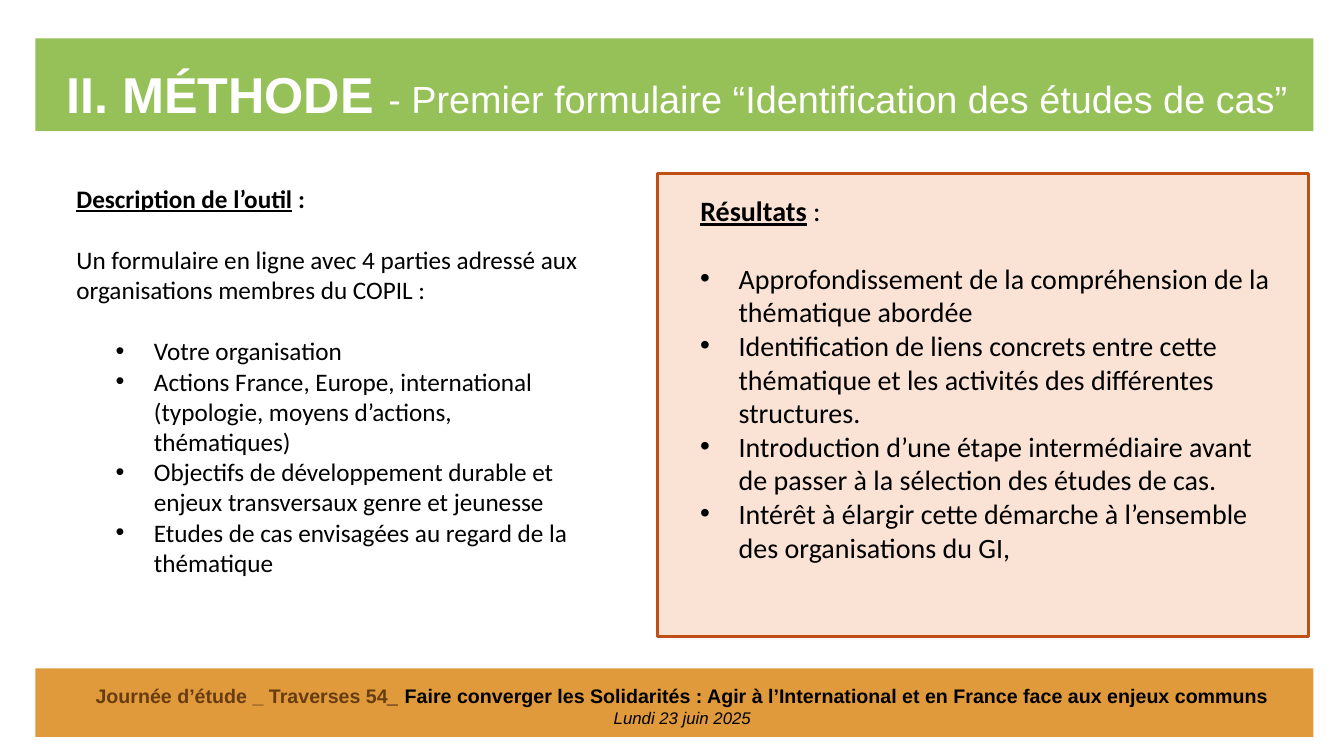
from dataclasses import dataclass

from lxml import etree
from pptx import Presentation
from pptx import util as u
from pptx.dml.color import RGBColor
from pptx.enum import shapes, text
from pptx.oxml import ns


@dataclass(frozen=True)
class Theme:
    green: str = "96C058"
    orange: str = "E09A3C"
    peach: str = "FAE2D5"
    rust: str = "BF4F14"
    brown: str = "683C11"
    white: str = "FFFFFF"
    black: str = "000000"
    heading_font: str = "Arial"
    body_font: str = "Calibri"
    title_size: int = 36
    subtitle_size: int = 27
    description_size: int = 18
    results_size: int = 20
    event_size: int = 14
    date_size: int = 12


THEME = Theme()
LINE_HEIGHT = 1.22
HEADING_INDENT = 7.2
LIST_INDENT = 35.2
BULLET_HANG = 27.4


def add_rectangle(slide, left, top, width, height, fill, line=None):
    shape = slide.shapes.add_shape(
        shapes.MSO_SHAPE.RECTANGLE, u.Pt(left), u.Pt(top), u.Pt(width), u.Pt(height)
    )
    shape.shadow.inherit = False
    shape.fill.solid()
    shape.fill.fore_color.rgb = RGBColor.from_string(fill)
    if line:
        shape.line.color.rgb = RGBColor.from_string(line)
        shape.line.width = u.Pt(2)
    else:
        shape.line.fill.background()


def add_text_box(slide, left, top, width, height, vertical_inset=3.6):
    shape = slide.shapes.add_textbox(u.Pt(left), u.Pt(top), u.Pt(width), u.Pt(height))
    frame = shape.text_frame
    frame.word_wrap = True
    frame.margin_left = frame.margin_right = u.Pt(7.2)
    frame.margin_top = frame.margin_bottom = u.Pt(vertical_inset)
    return frame


def add_run(paragraph, words, font, size, color=THEME.black, bold=False, italic=False, underline=False):
    run = paragraph.add_run()
    run.text = words
    run.font.name = font
    run.font.size = u.Pt(size)
    run.font.color.rgb = RGBColor.from_string(color)
    run.font.bold = bold
    run.font.italic = italic
    run.font.underline = underline


def set_indent(paragraph, left, hanging=0):
    properties = paragraph._p.get_or_add_pPr()
    properties.set("marL", str(u.Pt(left)))
    properties.set("indent", str(u.Pt(-hanging)))
    return properties


def add_heading(frame, words, size, indent, colon_bold):
    paragraph = frame.paragraphs[0]
    set_indent(paragraph, indent)
    add_run(paragraph, words, THEME.body_font, size, bold=True, underline=True)
    add_run(paragraph, " :", THEME.body_font, size, bold=colon_bold)


def add_bullets(frame, items, size):
    for index, item in enumerate(items):
        paragraph = frame.add_paragraph()
        if index == 0:
            paragraph.space_before = u.Pt(size * LINE_HEIGHT)
        properties = set_indent(paragraph, LIST_INDENT + BULLET_HANG, BULLET_HANG)
        etree.SubElement(properties, ns.qn("a:buFont"), typeface="Arial")
        etree.SubElement(properties, ns.qn("a:buChar"), char="•")
        add_run(paragraph, item, THEME.body_font, size)


def add_title(slide):
    add_rectangle(slide, 25.2, 27.4, 913, 66.2, THEME.green)
    paragraph = add_text_box(slide, 40.3, 20.2, 888.5, 51.1).paragraphs[0]
    paragraph.line_spacing = 1.5
    add_run(paragraph, "II. MÉTHODE ", THEME.heading_font, THEME.title_size, THEME.white, bold=True)
    add_run(
        paragraph, "- Premier formulaire “Identification des études de cas”",
        THEME.heading_font, THEME.subtitle_size, THEME.white,
    )


def add_description(slide):
    size = THEME.description_size
    frame = add_text_box(slide, 40.3, 123.8, 384.5, 316, 7.2)
    add_heading(frame, "Description de l’outil", size, HEADING_INDENT, True)
    introduction = frame.add_paragraph()
    introduction.space_before = u.Pt(size * LINE_HEIGHT)
    set_indent(introduction, HEADING_INDENT)
    add_run(
        introduction,
        "Un formulaire en ligne avec 4 parties adressé aux organisations membres du COPIL :",
        THEME.body_font, size,
    )
    add_bullets(frame, [
        "Votre organisation",
        "Actions France, Europe, international (typologie, moyens d’actions, thématiques)",
        "Objectifs de développement durable et enjeux transversaux genre et jeunesse",
        "Etudes de cas envisagées au regard de la thématique",
    ], size)


def add_results(slide):
    size = THEME.results_size
    add_rectangle(slide, 469.4, 123.8, 465.1, 331.2, THEME.peach, THEME.rust)
    frame = add_text_box(slide, 457.9, 131, 461.5, 306, 7.2)
    add_heading(frame, "Résultats", size, LIST_INDENT, False)
    add_bullets(frame, [
        "Approfondissement de la compréhension de la thématique abordée",
        "Identification de liens concrets entre cette thématique et les activités des différentes structures.",
        "Introduction d’une étape intermédiaire avant de passer à la sélection des études de cas.",
        "Intérêt à élargir cette démarche à l’ensemble des organisations du GI,",
    ], size)


def add_footer(slide):
    font = THEME.heading_font
    add_rectangle(slide, 25.2, 477.4, 913, 49, THEME.orange)
    frame = add_text_box(slide, 40.3, 485.3, 894.2, 38.9)
    event = frame.paragraphs[0]
    add_run(event, "Journée d’étude _ Traverses 54", font, THEME.event_size, THEME.brown, bold=True)
    add_run(event, "_ ", font, THEME.event_size, italic=True)
    add_run(
        event,
        "Faire converger les Solidarités : Agir à l’International et en France face aux enjeux communs",
        font, THEME.event_size, bold=True,
    )
    date = frame.add_paragraph()
    add_run(date, "Lundi 23 juin 2025", font, THEME.date_size, italic=True)
    for paragraph in frame.paragraphs:
        paragraph.alignment = text.PP_ALIGN.CENTER


def main():
    presentation = Presentation()
    presentation.slide_width = u.Pt(960)
    presentation.slide_height = u.Pt(540)
    slide = presentation.slides.add_slide(presentation.slide_layouts[6])
    add_title(slide)
    add_description(slide)
    add_results(slide)
    add_footer(slide)
    presentation.save("out.pptx")


if __name__ == "__main__":
    main()
